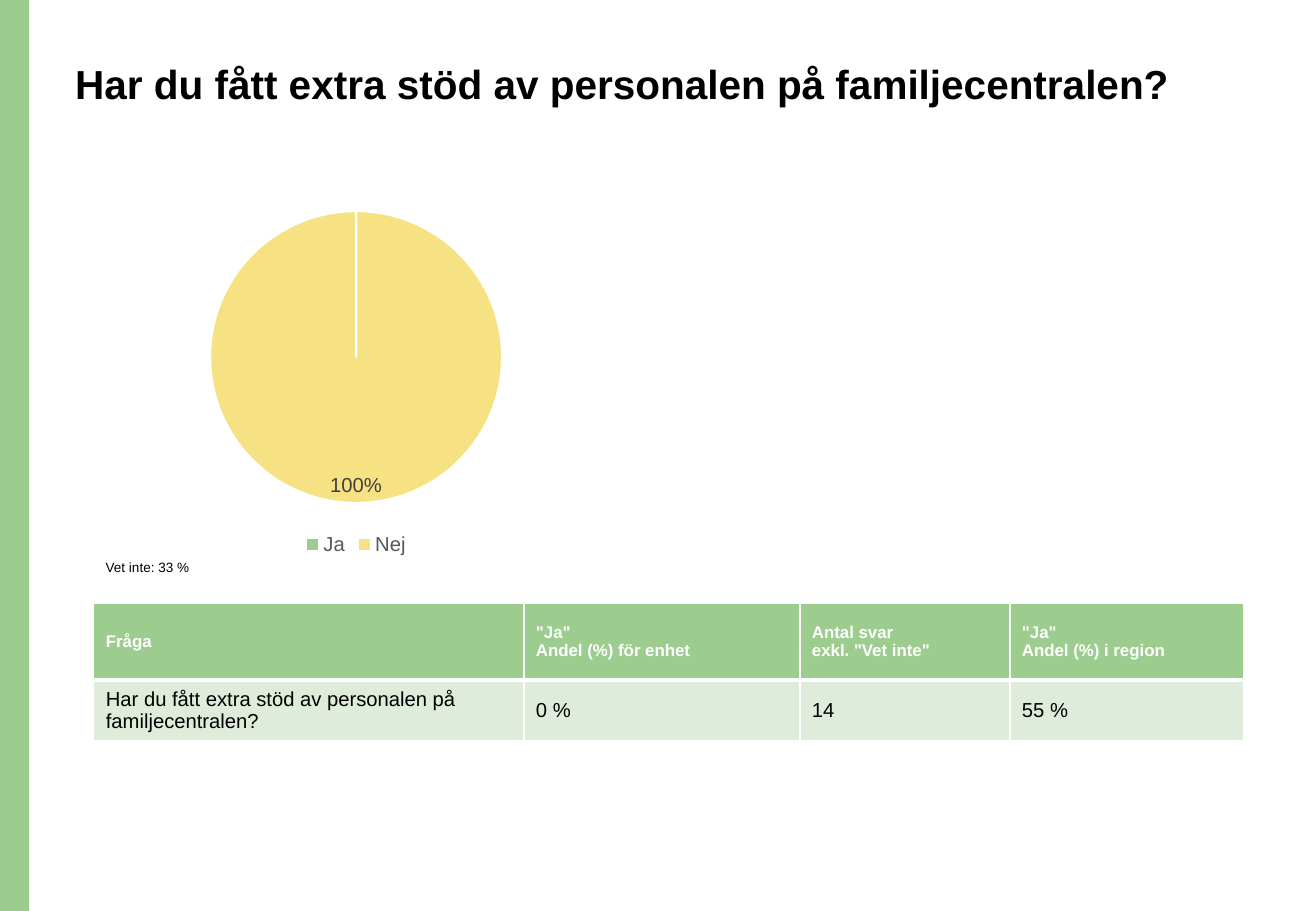
from typing import NamedTuple

from lxml import etree
from pptx import Presentation
from pptx.chart.data import CategoryChartData
from pptx.dml.color import RGBColor
from pptx.enum.chart import XL_CHART_TYPE, XL_LABEL_POSITION, XL_LEGEND_POSITION
from pptx.enum.shapes import MSO_SHAPE
from pptx.enum.text import MSO_ANCHOR
from pptx.oxml.ns import qn
from pptx.util import Cm, Pt

PIE = XL_CHART_TYPE.PIE
IN_END = XL_LABEL_POSITION.INSIDE_END
BOTTOM = XL_LEGEND_POSITION.BOTTOM
RECT = MSO_SHAPE.RECTANGLE
TOP, MIDDLE = MSO_ANCHOR.TOP, MSO_ANCHOR.MIDDLE

FONT = "Arial"
COLORS = {
    "green": "9DCC8F",
    "pale": "DFECDB",
    "yellow": "F6E183",
    "white": "FFFFFF",
    "black": "000000",
    "label": "404040",
    "legend": "595959",
}
TITLE = "Har du fått extra stöd av personalen på familjecentralen?"


class Box(NamedTuple):
    left: float
    top: float
    width: float
    height: float

    def place(self) -> list:
        return [Cm(side) for side in self]


class Column(NamedTuple):
    width: float
    head: str
    body: str


class Slice(NamedTuple):
    name: str
    value: float
    color: str


COLUMNS = [
    Column(8.99, "Fråga", TITLE),
    Column(5.77, '"Ja"\nAndel (%) för enhet', "0 %"),
    Column(4.39, 'Antal svar\nexkl. "Vet inte"', "14"),
    Column(4.88, '"Ja"\nAndel (%) i region', "55 %"),
]
SLICES = [Slice("Ja", 0, "green"), Slice("Nej", 1, "yellow")]


def rgb(color: str) -> RGBColor:
    return RGBColor.from_string(COLORS[color])


def style(font, size: float, color: str = "black", bold: bool = False) -> None:
    font.name, font.size, font.bold = FONT, Pt(size), bold
    font.color.rgb = rgb(color)


def write(frame, text: str, *, size: float, color: str = "black",
          bold: bool = False, space: float = 1, anchor=TOP) -> None:
    frame.word_wrap = True
    frame.vertical_anchor = anchor
    frame.text = text
    for para in frame.paragraphs:
        para.line_spacing = space
        for run in para.runs:
            style(run.font, size, color, bold)


def add_text(slide, box: Box, text: str, **form) -> None:
    write(slide.shapes.add_textbox(*box.place()).text_frame, text, **form)


def add_bar(slide, box: Box) -> None:
    bar = slide.shapes.add_shape(RECT, *box.place())
    bar.shadow.inherit = False
    bar.fill.solid()
    bar.fill.fore_color.rgb = rgb("green")
    bar.line.fill.background()


def add_pie(slide, box: Box) -> None:
    data = CategoryChartData()
    data.categories = [part.name for part in SLICES]
    data.add_series("Series 1", [part.value for part in SLICES])
    chart = slide.shapes.add_chart(PIE, *box.place(), data).chart
    chart.has_title = False
    style(chart.font, 10)

    # Legend
    chart.has_legend = True
    chart.legend.position = BOTTOM
    chart.legend.include_in_layout = False
    style(chart.legend.font, 12, "legend")

    # Slices and labels
    plot = chart.plots[0]
    plot.vary_by_categories = True
    series = plot.series[0]
    for i, part in enumerate(SLICES):
        form = series.points[i].format
        form.fill.solid()
        form.fill.fore_color.rgb = rgb(part.color)
        form.line.color.rgb = rgb("white")
        form.line.width = Pt(1.5)
    labels = series.data_labels
    labels.show_value = True
    labels.position = IN_END
    labels.number_format = '[<0.01]"";[>0.01]0%'
    labels.number_format_is_linked = False
    style(labels.font, 12, "label")


def add_edges(cell, top: float, bottom: float) -> None:
    props = cell._tc.get_or_add_tcPr()
    for side, width in (("L", 1), ("R", 1), ("T", top), ("B", bottom)):
        edge = etree.SubElement(props, qn(f"a:ln{side}"), w=str(Pt(width)))
        fill = etree.SubElement(edge, qn("a:solidFill"))
        etree.SubElement(fill, qn("a:srgbClr"), val=COLORS["white"])


def fill_cell(cell, text: str, fill: str, top: float, bottom: float, **form) -> None:
    add_edges(cell, top, bottom)
    cell.fill.solid()
    cell.fill.fore_color.rgb = rgb(fill)
    write(cell.text_frame, text, **form)
    cell.vertical_anchor = MIDDLE


def add_grid(slide, box: Box) -> None:
    table = slide.shapes.add_table(2, len(COLUMNS), *box.place()).table
    table.rows[0].height, table.rows[1].height = Cm(1.6), Cm(0.58)
    for i, col in enumerate(COLUMNS):
        table.columns[i].width = Cm(col.width)
        fill_cell(table.cell(0, i), col.head, "green", 1, 3,
                  size=10, color="white", bold=True)
        fill_cell(table.cell(1, i), col.body, "pale", 3, 1, size=12)


def main() -> None:
    deck = Presentation()
    deck.slide_width, deck.slide_height = Cm(27.51), Cm(19.05)
    slide = deck.slides.add_slide(deck.slide_layouts[6])

    # Side bar and title
    add_bar(slide, Box(0, 0, 0.61, 19.05))
    add_text(slide, Box(1.32, 1.22, 23.72, 2.59), TITLE,
             size=24, bold=True, space=0.9)

    # Chart, table and note
    add_pie(slide, Box(3.1, 4.06, 8.69, 7.65))
    add_grid(slide, Box(1.96, 12.62, 24.03, 2.18))
    add_text(slide, Box(1.96, 11.4, 5.33, 1.22), "Vet inte: 33 %",
             size=8, space=1.5)

    deck.save("out.pptx")


if __name__ == "__main__":
    main()
